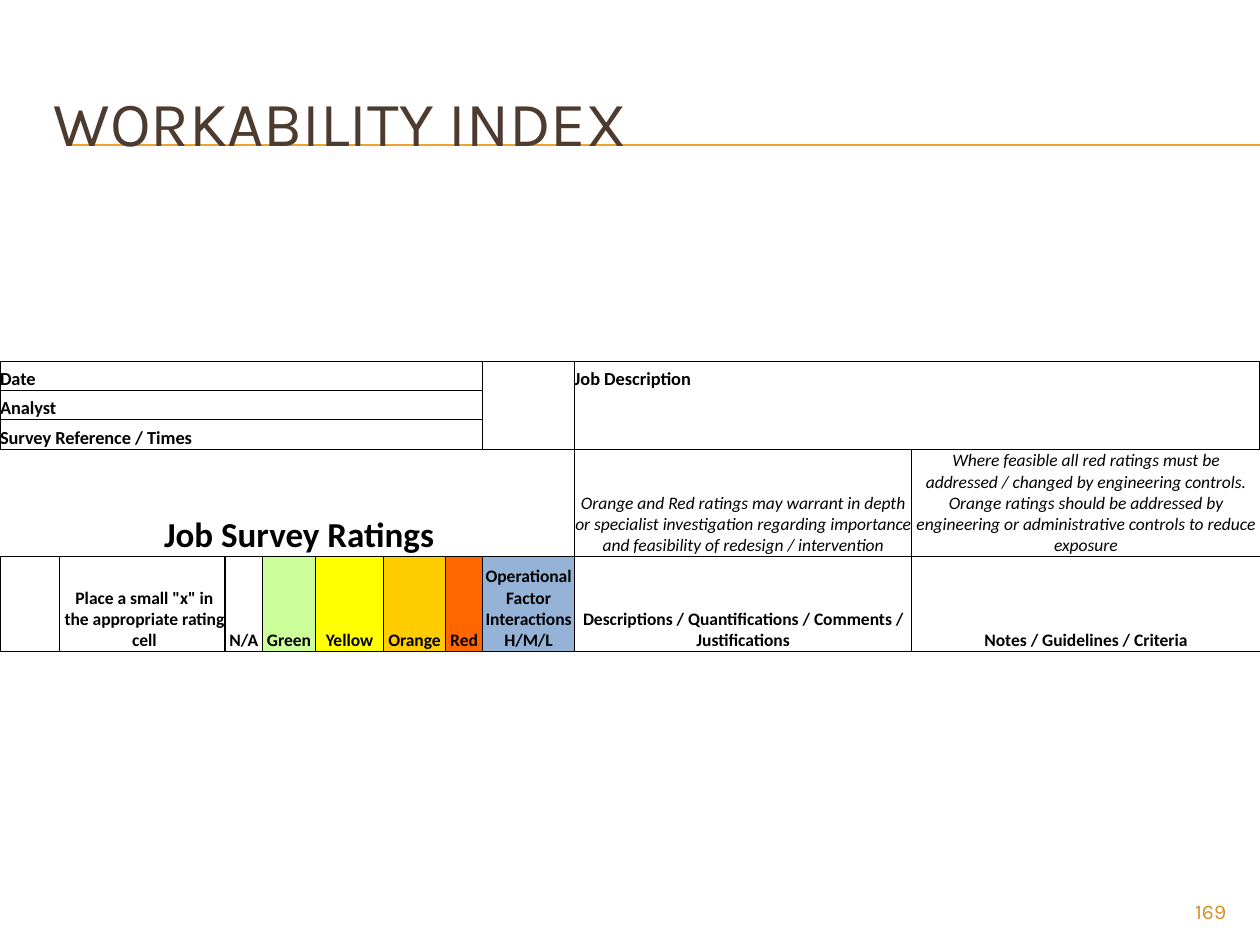
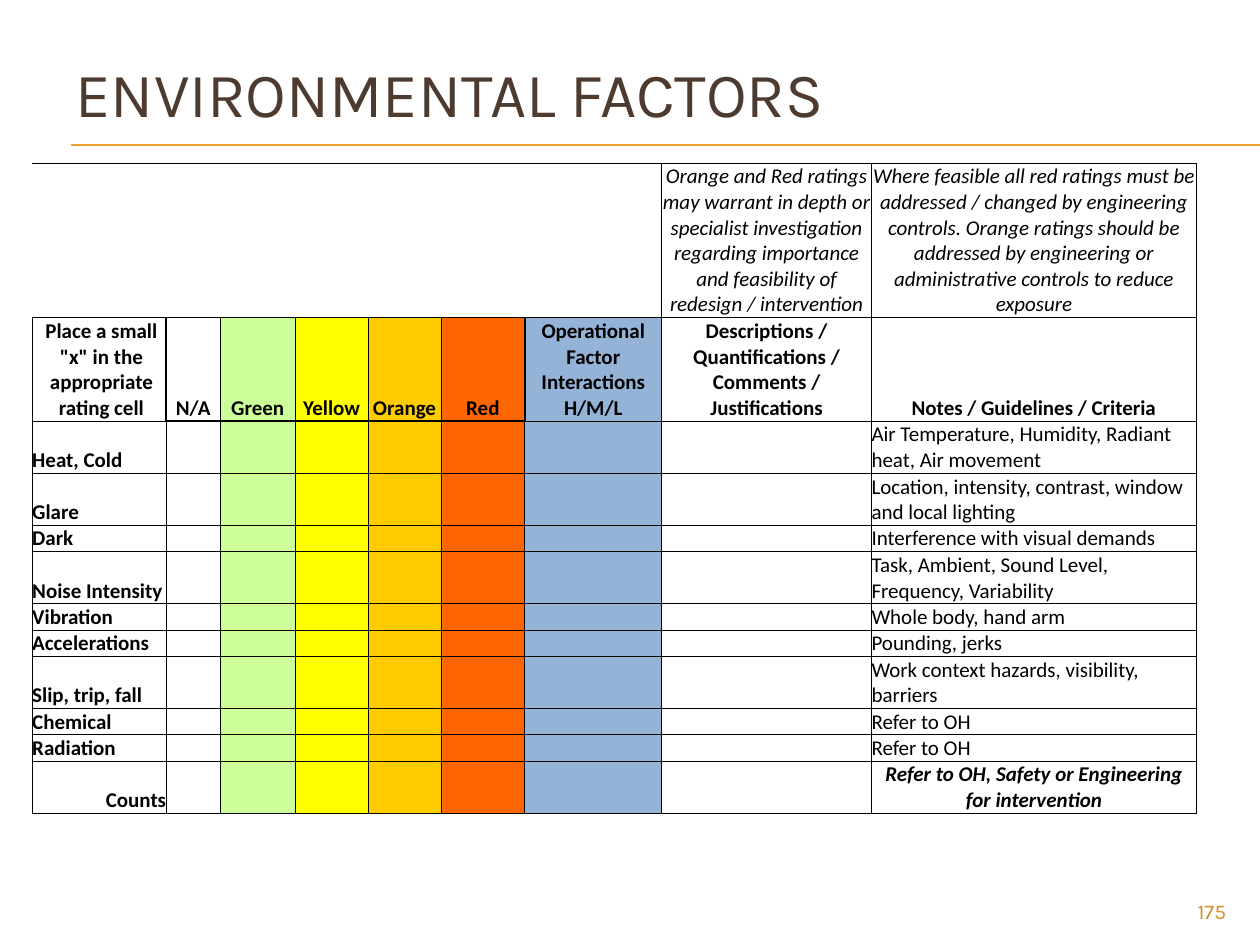
from dataclasses import dataclass, field
from typing import NamedTuple

from lxml.etree import SubElement
from pptx import Presentation
from pptx.dml.color import RGBColor
from pptx.enum.shapes import MSO_CONNECTOR
from pptx.enum.text import MSO_ANCHOR, MSO_AUTO_SIZE, PP_ALIGN
from pptx.oxml import parse_xml
from pptx.oxml.ns import nsdecls, qn
from pptx.slide import Slide
from pptx.table import Table
from pptx.util import Cm, Pt


@dataclass(frozen=True)
class Theme:
    title_font: str = "Karla"
    table_font: str = "Calibri"
    title: str = "4E3B30"
    accent: str = "F0A22E"
    number: str = "D48F29"
    ink: str = "000000"
    title_size: float = 36
    number_size: float = 12
    banner_size: float = 20
    field_size: float = 10.5
    survey_size: float = 10
    factor_size: float = 12
    thin: float = 0.5
    thick: float = 1
    plain_table: str = "{2D5ABB26-0587-4C30-8999-92F81FD0307C}"


class Box(NamedTuple):
    left: float
    top: float
    width: float
    height: float


class Heading(NamedTuple):
    text: str
    fill: str | None = None
    indent: float = 0


class Factor(NamedTuple):
    name: str
    criteria: str
    lines: int = 1


@dataclass(frozen=True)
class CellText:
    text: str
    size: float
    align: PP_ALIGN = PP_ALIGN.LEFT
    bold: bool = False
    italic: bool = False
    indent: float = 0


@dataclass
class Grid:
    left: float
    top: float
    cols: list[float]
    rows: list[float]
    empty_size: float
    heading_cols: list[int]
    texts: dict[tuple[int, int], CellText] = field(default_factory=dict)
    fills: dict[tuple[int, int], str] = field(default_factory=dict)
    borders: dict[tuple[int, int, str], float] = field(default_factory=dict)
    merges: list[tuple[int, int, int]] = field(default_factory=list)

    def outline(self, top: int, left: int, bottom: int, right: int, width: float) -> None:
        for row in range(top, bottom + 1):
            for col, inner, outer, step in ((left, "L", "R", -1), (right, "R", "L", 1)):
                self.borders[row, col, inner] = width
                self.borders[row, col + step, outer] = width
        for col in range(left, right + 1):
            for row, inner, outer, step in ((top, "T", "B", -1), (bottom, "B", "T", 1)):
                self.borders[row, col, inner] = width
                self.borders[row + step, col, outer] = width

    def rule_cells(self, top: int, left: int, bottom: int, right: int, width: float) -> None:
        for row in range(top, bottom + 1):
            for col in range(left, right + 1):
                self.outline(row, col, row, col, width)

    def add_headings(self, row: int, size: float) -> None:
        for col, heading in zip(self.heading_cols, HEADINGS):
            self.texts[row, col] = CellText(heading.text, size, PP_ALIGN.CENTER, bold=True,
                                            indent=heading.indent)
        for col, advice in zip(self.heading_cols[-len(ADVICE):], ADVICE):
            self.texts[row - 1, col] = CellText(advice, size, PP_ALIGN.CENTER, italic=True)

    def fill_ratings(self, top: int, bottom: int) -> None:
        for col, heading in zip(self.heading_cols, HEADINGS):
            if heading.fill:
                self.fills.update({(row, col): heading.fill for row in range(top, bottom + 1)})


THEME = Theme()

HEADINGS = [
    Heading('Place a small "x" in the appropriate rating cell', indent=0.09),
    Heading("N/A"),
    Heading("Green", "CCFF99"),
    Heading("Yellow", "FFFF00"),
    Heading("Orange", "FFCC00"),
    Heading("Red", "FF6600"),
    Heading("Operational Factor Interactions H/M/L", "95B3D7"),
    Heading("Descriptions / Quantifications / Comments / Justifications"),
    Heading("Notes / Guidelines / Criteria"),
]

ADVICE = [
    "Orange and Red ratings may warrant in depth or specialist investigation "
    "regarding importance and feasibility of redesign / intervention",
    "Where feasible all red ratings must be addressed / changed by engineering controls. "
    "Orange ratings should be addressed by engineering or administrative controls "
    "to reduce exposure",
]

FACTORS = [
    Factor("Heat, Cold", "Air Temperature, Humidity, Radiant heat, Air movement", 2),
    Factor("Glare", "Location, intensity, contrast, window and local lighting", 2),
    Factor("Dark", "Interference with visual demands"),
    Factor("Noise Intensity", "Task, Ambient, Sound Level, Frequency, Variability", 2),
    Factor("Vibration", "Whole body, hand arm"),
    Factor("Accelerations", "Pounding, jerks"),
    Factor("Slip, trip, fall", "Work context hazards, visibility, barriers", 2),
    Factor("Chemical", "Refer to OH"),
    Factor("Radiation", "Refer to OH"),
]


def add_run(p, text: str, font: str, size: float, color: str):
    r = p.add_run()
    r.text = text
    r.font.name = font
    r.font.size = Pt(size)
    r.font.color.rgb = RGBColor.from_string(color)
    return r


def add_rules(s: Slide) -> None:
    for y in (2.92, 2.94):
        line = s.shapes.add_connector(MSO_CONNECTOR.STRAIGHT, Cm(1.43), Cm(y), Cm(25.4), Cm(y))
        line.line.color.rgb = RGBColor.from_string(THEME.accent)
        line.line.width = Pt(0.75)
        SubElement(line._element.spPr, qn("a:effectLst"))


def place_title(s: Slide, text: str, box: Box) -> None:
    sp = s.shapes.title
    sp.left, sp.top, sp.width, sp.height = map(Cm, box)
    tf = sp.text_frame
    tf.auto_size = MSO_AUTO_SIZE.NONE
    tf.vertical_anchor = MSO_ANCHOR.MIDDLE
    p = tf.paragraphs[0]
    p.alignment = PP_ALIGN.LEFT
    add_run(p, text, THEME.title_font, THEME.title_size, THEME.title)
    s.shapes._spTree.append(sp._element)


def add_number(s: Slide, number: int) -> None:
    tf = s.shapes.add_textbox(Cm(22.86), Cm(17.98), Cm(2.11), Cm(0.69)).text_frame
    tf.word_wrap = True
    p = tf.paragraphs[0]
    p.alignment = PP_ALIGN.RIGHT
    add_run(p, str(number), THEME.title_font, THEME.number_size, THEME.number)


def draw_borders(table: Table, grid: Grid, row: int, col: int) -> None:
    tc_pr = table.cell(row, col)._tc.get_or_add_tcPr()
    for index, side in enumerate("LRTB"):
        width = grid.borders.get((row, col, side))
        paint = f'<a:solidFill><a:srgbClr val="{THEME.ink}"/></a:solidFill>'
        tc_pr.insert(index, parse_xml(
            f'<a:ln{side} {nsdecls("a")} w="{Pt(width or 0)}">'
            f'{paint if width else "<a:noFill/>"}</a:ln{side}>'))


def draw_cell(table: Table, grid: Grid, row: int, col: int) -> None:
    cell = table.cell(row, col)
    cell.margin_left = cell.margin_right = cell.margin_top = cell.margin_bottom = 0
    cell.vertical_anchor = MSO_ANCHOR.BOTTOM
    if color := grid.fills.get((row, col)):
        cell.fill.solid()
        cell.fill.fore_color.rgb = RGBColor.from_string(color)
    else:
        cell.fill.background()
    p = cell.text_frame.paragraphs[0]
    if content := grid.texts.get((row, col)):
        cell.margin_left = Cm(content.indent)
        p.alignment = content.align
        r = add_run(p, content.text, THEME.table_font, content.size, THEME.ink)
        r.font.bold = content.bold
        r.font.italic = content.italic
    else:
        SubElement(p._p, qn("a:endParaRPr"), sz=str(int(grid.empty_size * 100)))
    draw_borders(table, grid, row, col)


def add_grid(s: Slide, grid: Grid) -> None:
    frame = s.shapes.add_table(len(grid.rows), len(grid.cols), Cm(grid.left), Cm(grid.top),
                               Cm(sum(grid.cols)), Cm(sum(grid.rows)))
    table = frame.table
    table.first_row = table.horz_banding = False
    table._tbl.tblPr.find(qn("a:tableStyleId")).text = THEME.plain_table
    for col, width in zip(table.columns, grid.cols):
        col.width = Cm(width)
    for row, height in zip(table.rows, grid.rows):
        row.height = Cm(height)
    for row, first, last in grid.merges:
        table.cell(row, first).merge(table.cell(row, last))
        grid.borders[row, first, "R"] = grid.borders.get((row, last, "R"), 0)
    for row in range(len(grid.rows)):
        for col in range(len(grid.cols)):
            draw_cell(table, grid, row, col)


def survey_grid() -> Grid:
    grid = Grid(0, 6.15,
                [1.19, 3.35, 0.75, 0.36, 0.71, 0.38, 0.99, 0.94, 0.31, 0.75, 1.85, 6.8, 7.02],
                [1.14, 0.58, 0.58, 0.61, 2.16, 1.91], THEME.survey_size,
                [1, 2, 3, 5, 7, 9, 10, 11, 12])
    grid.merges = [(row, col, col + 1) for row in range(4) for col in (2, 4, 8)]
    grid.merges += [(3, 0, 1), (4, 0, 10)]
    grid.merges += [(5, col, col + 1) for col in (3, 5, 7)]
    for row, label in enumerate(("Date", "Analyst", "Survey Reference / Times"), 1):
        grid.texts[row, 0] = CellText(label, THEME.field_size, bold=True)
        grid.outline(row, 0, row, 9, THEME.thin)
    grid.texts[1, 11] = CellText("Job Description", THEME.field_size, bold=True)
    grid.texts[4, 0] = CellText("Job Survey Ratings", THEME.banner_size, PP_ALIGN.CENTER,
                                bold=True, indent=0.48)
    grid.add_headings(5, THEME.survey_size)
    grid.fill_ratings(5, 5)
    grid.rule_cells(4, 11, 4, 12, THEME.thin)
    starts = [0, *grid.heading_cols]
    for first, following in zip(starts, [*starts[1:], len(grid.cols)]):
        grid.outline(5, first, 5, following - 1, THEME.thin)
    for first, last in ((0, 9), (10, 10), (11, 12)):
        grid.outline(1, first, 3, last, THEME.thick)
    for first, last in ((2, 9), (10, 10)):
        grid.outline(5, first, 5, last, THEME.thick)
    return grid


def factor_grid() -> Grid:
    size = THEME.factor_size
    lines = [4, *(factor.lines for factor in FACTORS), 2]
    grid = Grid(0.65, 3.3, [2.7, 1.09, 1.51, 1.47, 1.47, 1.69, 2.76, 4.23, 6.55],
                [3.1, *(round(0.52 * count + 0.01, 2) for count in lines)], size,
                list(range(9)))
    last = len(lines)
    grid.add_headings(1, size)
    grid.fill_ratings(1, last)
    for row, factor in enumerate(FACTORS, 2):
        grid.texts[row, 0] = CellText(factor.name, size, bold=True)
        grid.texts[row, 8] = CellText(factor.criteria, size)
    grid.texts[last, 0] = CellText("Counts", size, PP_ALIGN.RIGHT, bold=True)
    grid.texts[last, 8] = CellText("Refer to OH, Safety or Engineering for intervention", size,
                                   PP_ALIGN.CENTER, bold=True, italic=True)
    grid.rule_cells(0, 7, 0, 8, THEME.thin)
    grid.rule_cells(1, 0, last, 8, THEME.thin)
    grid.borders.update({(0, col, "T"): THEME.thick for col in range(9)})
    for first, end in ((1, 5), (6, 6)):
        grid.outline(1, first, 1, end, THEME.thick)
    grid.borders.update({(1, 6, "B"): THEME.thin, (2, 6, "T"): THEME.thin})
    return grid


def add_survey_slide(prs, title: str, title_box: Box, grid: Grid, number: int) -> None:
    s = prs.slides.add_slide(prs.slide_layouts[5])
    add_rules(s)
    add_grid(s, grid)
    place_title(s, title, title_box)
    add_number(s, number)


def main() -> None:
    prs = Presentation()
    prs.slide_width, prs.slide_height = Cm(25.4), Cm(19.05)
    add_survey_slide(prs, "WORKABILITY INDEX", Box(0.83, 1.27, 24.13, 2.34), survey_grid(), 169)
    add_survey_slide(prs, "ENVIRONMENTAL FACTORS", Box(1.27, 0.76, 22.86, 2.21),
                     factor_grid(), 175)
    prs.save("out.pptx")


if __name__ == "__main__":
    main()
